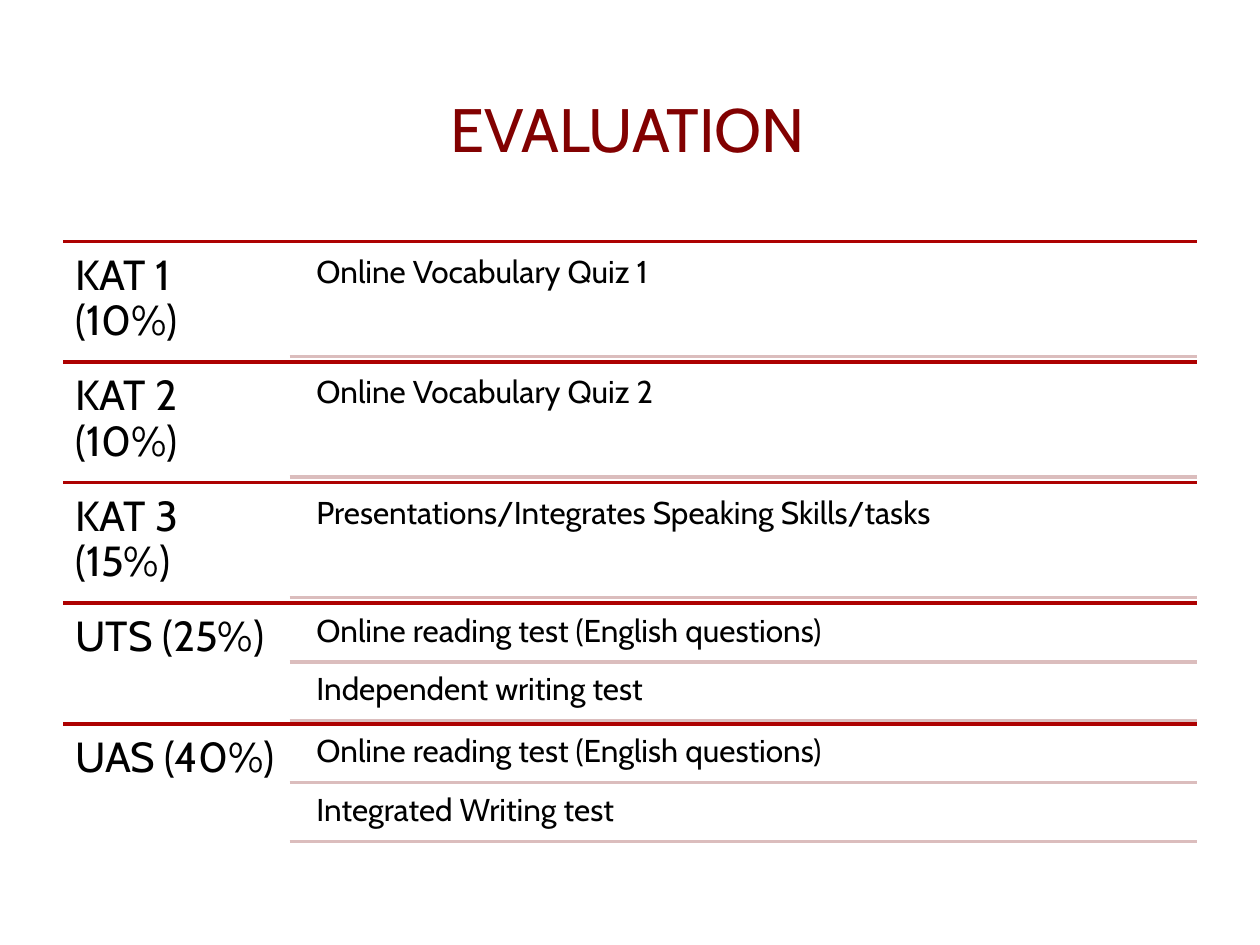
from lxml import etree
from pptx import Presentation
from pptx import util as u
from pptx.dml.color import RGBColor
from pptx.enum import shapes, text
from pptx.oxml.ns import qn

FONT = "Cabin"
BLACK, TITLE_RED, RULE_RED, PALE_RED = "000000", "820101", "AD0101", "DBBDBD"
LEFT, RIGHT, TOP, ROW_HEIGHT = 1.27, 24.13, 4.87, 2.43
ITEM_LEFT, ITEM_WIDTH = 6.2, 17.95
LABEL_WIDTH = 4.57
GAP_RATIO = 0.05
READING_TEST = "Online reading test (English questions)"

EVALUATION = [
    ("KAT 1 (10%)", ["Online Vocabulary Quiz 1"]),
    ("KAT 2 (10%)", ["Online Vocabulary Quiz 2"]),
    ("KAT 3 (15%)", ["Presentations/Integrates Speaking Skills/tasks"]),
    ("UTS (25%)", [READING_TEST, "Independent writing test"]),
    ("UAS (40%)", [READING_TEST, "Integrated Writing test"]),
]


def color(hex_value):
    return RGBColor.from_string(hex_value)


def add_text(page, words, left, top, width, height, size, inset,
             hex_value=BLACK, spacing=0.9):
    box = page.shapes.add_textbox(u.Cm(left), u.Cm(top), u.Cm(width), u.Cm(height))
    frame = box.text_frame
    frame.text = words
    frame.word_wrap = True
    frame.margin_left = frame.margin_right = u.Cm(inset)
    frame.margin_top = frame.margin_bottom = u.Cm(inset)
    para = frame.paragraphs[0]
    para.line_spacing = spacing
    font = para.runs[0].font
    font.name = FONT
    font.size = u.Pt(size)
    font.color.rgb = color(hex_value)
    return box


def add_title(page, words):
    box = add_text(page, words, 1.19, 1.14, 22.94, 2.9, 35, 0.25, TITLE_RED, 1.0)
    box.text_frame.vertical_anchor = text.MSO_ANCHOR.MIDDLE
    box.text_frame.paragraphs[0].alignment = text.PP_ALIGN.CENTER


def add_rule(page, left, top, hex_value):
    rule = page.shapes.add_connector(
        shapes.MSO_CONNECTOR.STRAIGHT, u.Cm(left), u.Cm(top), u.Cm(RIGHT), u.Cm(top))
    rule.line.color.rgb = color(hex_value)
    rule.line.width = u.Pt(2)
    etree.SubElement(rule._element.spPr, qn("a:effectLst"))


def add_row(page, top, label, items):
    add_rule(page, LEFT, top, RULE_RED)
    add_text(page, label, LEFT, top, LABEL_WIDTH, ROW_HEIGHT, 24, 0.25)
    count = len(items)
    height = ROW_HEIGHT / (count + (count + 1) * GAP_RATIO)
    gap = height * GAP_RATIO
    for index, item in enumerate(items):
        item_top = top + gap + index * (height + gap)
        add_text(page, item, ITEM_LEFT, item_top, ITEM_WIDTH, height, 18, 0.18)
        add_rule(page, LEFT + LABEL_WIDTH, item_top + height, PALE_RED)


def main():
    deck = Presentation()
    deck.slide_width, deck.slide_height = u.Cm(25.4), u.Cm(19.05)
    page = deck.slides.add_slide(deck.slide_layouts[6])
    add_title(page, "EVALUATION")
    for index, (label, items) in enumerate(EVALUATION):
        add_row(page, TOP + index * ROW_HEIGHT, label, items)
    deck.save("out.pptx")


if __name__ == "__main__":
    main()
